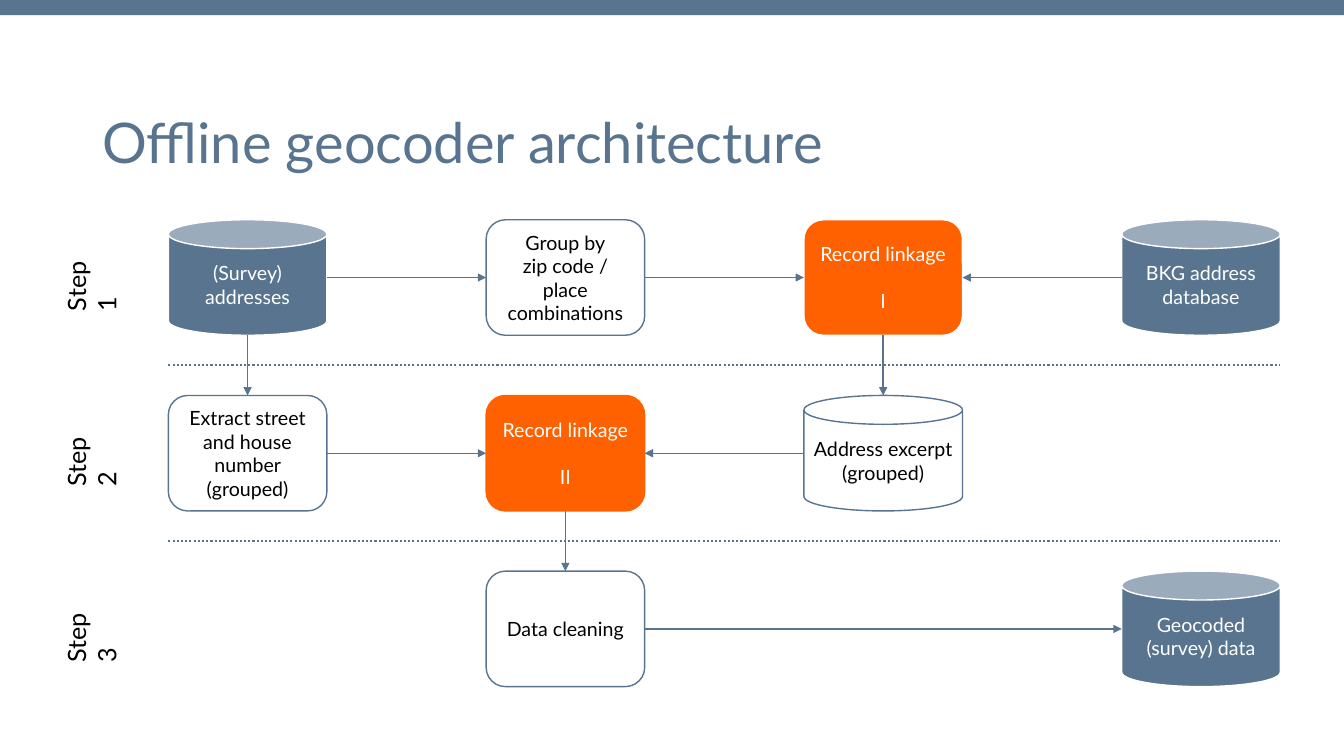
from dataclasses import dataclass

from lxml import etree
from pptx import Presentation
from pptx import util as u
from pptx.dml.color import RGBColor
from pptx.enum import dml, shapes, text
from pptx.oxml import ns


@dataclass(frozen=True)
class Theme:
    font: str = "Lato"
    blue: str = "58748F"
    orange: str = "FF6100"
    white: str = "FFFFFF"
    black: str = "000000"
    title_size: float = 40
    step_size: float = 18
    node_size: float = 14


@dataclass(frozen=True)
class Box:
    left: float
    top: float
    width: float
    height: float

    def points(self):
        return [u.Pt(n) for n in (self.left, self.top, self.width, self.height)]


THEME = Theme()
CAN = shapes.MSO_SHAPE.CAN
ROUNDED = shapes.MSO_SHAPE.ROUNDED_RECTANGLE
TOP, LEFT, BOTTOM, RIGHT = range(4)

# Flow grid, in points
COLUMN_PITCH, ROW_PITCH = 227, 125.5
NODE_WIDTH, NODE_HEIGHT = 113.25, 82.5

# Styles: fill, line, text colour
DATA = (THEME.blue, THEME.white, THEME.white)
PLAIN = (THEME.white, THEME.blue, THEME.black)
LINKAGE_ONE = (THEME.orange, THEME.white, THEME.white)
LINKAGE_TWO = (THEME.orange, THEME.orange, THEME.white)

# Name: column, row, preset, style, paragraphs, space between paragraphs
NODES = {
    "addresses": (0, 0, CAN, DATA, ["(Survey)", "addresses"], 0),
    "group": (1, 0, ROUNDED, PLAIN, ["Group by", "zip code / place combinations"], 0),
    "linkage one": (2, 0, ROUNDED, LINKAGE_ONE, ["Record linkage", "I"], 16.8),
    "database": (3, 0, CAN, DATA, ["BKG address database"], 0),
    "extract": (0, 1, ROUNDED, PLAIN, ["Extract street and house number (grouped)"], 0),
    "linkage two": (1, 1, ROUNDED, LINKAGE_TWO, ["Record linkage", "II"], 16.8),
    "excerpt": (2, 1, CAN, PLAIN, ["Address excerpt", "(grouped)"], 0),
    "cleaning": (1, 2, ROUNDED, PLAIN, ["Data cleaning"], 0),
    "geocoded": (3, 2, CAN, DATA, ["Geocoded (survey) data"], 0),
}

ARROWS = [
    ("addresses", RIGHT, "group", LEFT),
    ("group", RIGHT, "linkage one", LEFT),
    ("database", LEFT, "linkage one", RIGHT),
    ("addresses", BOTTOM, "extract", TOP),
    ("linkage one", BOTTOM, "excerpt", TOP),
    ("extract", RIGHT, "linkage two", LEFT),
    ("excerpt", LEFT, "linkage two", RIGHT),
    ("linkage two", BOTTOM, "cleaning", TOP),
    ("cleaning", RIGHT, "geocoded", LEFT),
]


def color(value):
    return RGBColor.from_string(value)


def add_run(paragraph, words, size, fill):
    run = paragraph.add_run()
    run.text = words
    run.font.name = THEME.font
    run.font.size = u.Pt(size)
    run.font.color.rgb = color(fill)


def add_shape(slide, preset, box, fill, line=None):
    shape = slide.shapes.add_shape(preset, *box.points())
    shape.shadow.inherit = False
    shape.fill.solid()
    shape.fill.fore_color.rgb = color(fill)
    if line:
        shape.line.color.rgb = color(line)
        shape.line.width = u.Pt(1)
    else:
        shape.line.fill.background()
    return shape


def add_line(slide, start, end, width):
    line = slide.shapes.add_connector(shapes.MSO_CONNECTOR.STRAIGHT, *start, *end)
    line.line.color.rgb = color(THEME.blue)
    line.line.width = u.Pt(width)
    etree.SubElement(line._element.spPr, ns.qn("a:effectLst"))
    return line


def add_label(slide, box, words, size, fill):
    label = slide.shapes.add_textbox(*box.points())
    label.text_frame.word_wrap = True
    add_run(label.text_frame.paragraphs[0], words, size, fill)
    return label


def add_header(slide, box):
    # Band across the top, title below it
    add_shape(slide, shapes.MSO_SHAPE.RECTANGLE,
              Box(box.left, box.top, box.width, 10.8), THEME.blue)
    title = add_label(slide, Box(box.left + 66, box.top + 73.5, 828, 60),
                      "Offline geocoder architecture", THEME.title_size, THEME.blue)
    title.text_frame.vertical_anchor = text.MSO_ANCHOR.MIDDLE
    title.text_frame.paragraphs[0].line_spacing = 0.9


def add_steps(slide, box):
    # Each label is turned about the centre of its row
    width, height = 62, 29
    for row in range(3):
        middle = box.top + row * ROW_PITCH + NODE_HEIGHT / 2
        place = Box(box.left + (box.width - width) / 2, middle - height / 2,
                    width, height)
        label = add_label(slide, place, f"Step {row + 1}",
                          THEME.step_size, THEME.black)
        label.rotation = 270


def add_node(slide, box, preset, style, lines, gap):
    fill, outline, ink = style
    node = add_shape(slide, preset, box, fill, outline)
    frame = node.text_frame
    frame.word_wrap = True
    frame.vertical_anchor = text.MSO_ANCHOR.MIDDLE
    for number, words in enumerate(lines):
        paragraph = frame.add_paragraph() if number else frame.paragraphs[0]
        paragraph.alignment = text.PP_ALIGN.CENTER
        if number and gap:
            paragraph.space_before = u.Pt(gap)
        add_run(paragraph, words, THEME.node_size, ink)
    return node


def side_middle(node, side):
    x, y = node.left + node.width // 2, node.top + node.height // 2
    return {TOP: (x, node.top), LEFT: (node.left, y),
            BOTTOM: (x, node.top + node.height),
            RIGHT: (node.left + node.width, y)}[side]


def add_arrow(slide, source, source_side, target, target_side):
    arrow = add_line(slide, side_middle(source, source_side),
                     side_middle(target, target_side), 1)
    # Cans number their connection sites differently, so only boxes are joined
    if source.auto_shape_type == ROUNDED:
        arrow.begin_connect(source, source_side)
    if target.auto_shape_type == ROUNDED:
        arrow.end_connect(target, target_side)
    etree.SubElement(arrow.line._get_or_add_ln(), ns.qn("a:tailEnd"), type="triangle")


def add_flow(slide, box):
    # Dotted separators halfway between rows
    for row in range(2):
        y = box.top + row * ROW_PITCH + (NODE_HEIGHT + ROW_PITCH) / 2
        separator = add_line(slide, (u.Pt(box.left), u.Pt(y)),
                             (u.Pt(box.left + box.width), u.Pt(y)), 1.5)
        separator.line.dash_style = dml.MSO_LINE.ROUND_DOT

    # Nodes on the grid, then the arrows between them
    nodes = {}
    for name, (column, row, *look) in NODES.items():
        place = Box(box.left + column * COLUMN_PITCH, box.top + row * ROW_PITCH,
                    NODE_WIDTH, NODE_HEIGHT)
        nodes[name] = add_node(slide, place, *look)
    for source, source_side, target, target_side in ARROWS:
        add_arrow(slide, nodes[source], source_side, nodes[target], target_side)


def main():
    presentation = Presentation()
    presentation.slide_width, presentation.slide_height = u.Pt(960), u.Pt(540)
    slide = presentation.slides.add_slide(presentation.slide_layouts[6])
    add_header(slide, Box(0, 0, 960, 140))
    add_steps(slide, Box(40, 157, 29, 333.5))
    add_flow(slide, Box(120.25, 157, 794.25, 333.5))
    presentation.save("out.pptx")


if __name__ == "__main__":
    main()
